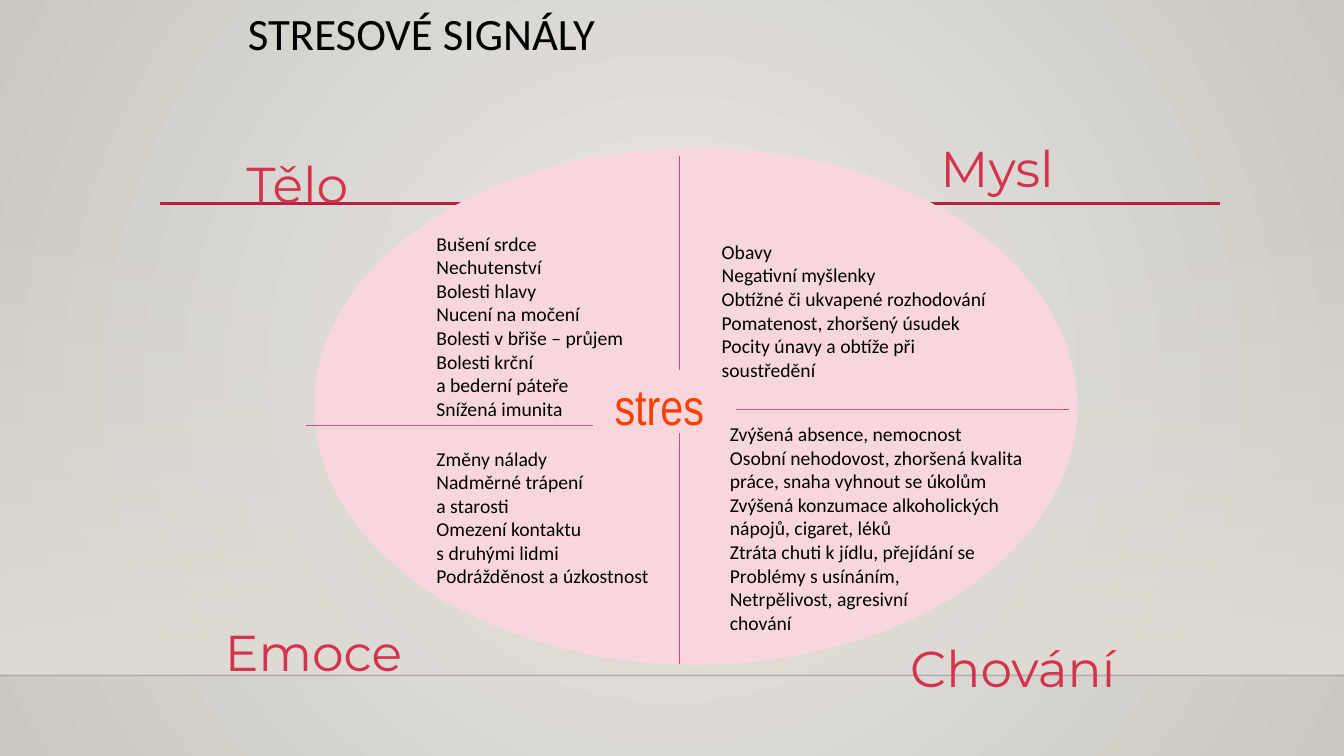
from lxml import etree
from pptx import Presentation
from pptx.dml.color import RGBColor
from pptx.enum.shapes import MSO_CONNECTOR, MSO_SHAPE
from pptx.enum.text import MSO_ANCHOR, PP_ALIGN
from pptx.oxml.ns import qn
from pptx.util import Inches, Pt

STRAIGHT = MSO_CONNECTOR.STRAIGHT
RECTANGLE, OVAL = MSO_SHAPE.RECTANGLE, MSO_SHAPE.OVAL
LEFT, CENTER = PP_ALIGN.LEFT, PP_ALIGN.CENTER
TOP = MSO_ANCHOR.TOP

BLACK = RGBColor(0x00, 0x00, 0x00)
FLOOR_LINE = RGBColor(0x00, 0x00, 0x01)
BACK_LIGHT = RGBColor(0xEC, 0xEA, 0xE7)
BACK_DARK = RGBColor(0xCA, 0xC7, 0xC1)
WALL = RGBColor(0xDF, 0xDB, 0xD5)
CRIMSON = RGBColor(0xB7, 0x1E, 0x42)
ROSE = RGBColor(0xD4, 0x32, 0x4D)
PINK = RGBColor(0xDE, 0x47, 0x8E)
PALE_PINK = RGBColor(0xF7, 0xD7, 0xDC)
ORANGE = RGBColor(0xFE, 0x3E, 0x02)

WIDTH, HEIGHT = 13.33, 7.5
FLOOR = 6.7      # height of the floor line
AXIS = 6.74      # vertical divider of the ellipse

deck = Presentation()
deck.slide_width, deck.slide_height = Inches(WIDTH), Inches(HEIGHT)
page = deck.slides.add_slide(deck.slide_layouts[6])


def add_line(x1, y1, x2, y2, color, weight):
    line = page.shapes.add_connector(
        STRAIGHT, Inches(x1), Inches(y1), Inches(x2), Inches(y2))
    line.line.color.rgb = color
    line.line.width = Pt(weight)
    etree.SubElement(line._element.spPr, qn("a:effectLst"))
    return line


def add_text(text, left, top, width, height, size, font, color, align=LEFT, wrap=False):
    box = page.shapes.add_textbox(
        Inches(left), Inches(top), Inches(width), Inches(height))
    frame = box.text_frame
    frame.text = text
    frame.word_wrap = wrap
    frame.vertical_anchor = TOP
    for para in frame.paragraphs:
        para.alignment = align
        for span in para.runs:
            span.font.size = Pt(size)
            span.font.name = font
            span.font.color.rgb = color
    return box


# Background: circular gradient
back = page.background.fill
back.gradient()
for position, (stop, color) in enumerate(zip(back.gradient_stops, (BACK_LIGHT, BACK_DARK))):
    stop.color.rgb = color
    stop.position = position
gradient = page._element.find(".//" + qn("a:gradFill"))
gradient.remove(gradient.find(qn("a:lin")))
circle = etree.SubElement(gradient, qn("a:path"), path="circle")
etree.SubElement(circle, qn("a:fillToRect"), l="50000", t="50000", r="50000", b="50000")

# Wall that fades in towards the floor
wall = page.shapes.add_shape(
    RECTANGLE, 0, Inches(2.21), Inches(WIDTH), Inches(FLOOR - 2.21))
wall.shadow.inherit = False
wall.line.fill.background()
wall.fill.gradient()
wall.fill.gradient_angle = 270
for position, stop in enumerate(wall.fill.gradient_stops):
    stop.color.rgb = WALL
    stop.position = position
clear_color = wall._element.spPr.find(".//" + qn("a:srgbClr"))
etree.SubElement(clear_color, qn("a:alpha"), val="0")

# Floor line and title rule
floor_line = add_line(0, FLOOR, WIDTH, FLOOR, FLOOR_LINE, 1)
floor_color = floor_line._element.spPr.find(".//" + qn("a:srgbClr"))
etree.SubElement(floor_color, qn("a:alpha"), val="20000")
add_line(1.59, 2.02, 12.1, 2.02, CRIMSON, 2.5)

# Title
title = add_text("STRESOVÉ SIGNÁLY", 2.36, 0.07, 7.79, 1.01, 32, "Calibri", BLACK, wrap=True)
title.text_frame.paragraphs[0].line_spacing = 0.9

# Ellipse with the word in its middle
ellipse = page.shapes.add_shape(
    OVAL, Inches(3.12), Inches(1.47), Inches(7.56), Inches(5.12))
ellipse.shadow.inherit = False
ellipse.fill.solid()
ellipse.fill.fore_color.rgb = PALE_PINK
ellipse.line.color.rgb = PALE_PINK
ellipse.line.width = Pt(0.75)
add_text("stres", 5.88, 3.67, 1.32, 0.96, 36, "Arial Narrow", ORANGE, CENTER)

# Dividers between the four quarters
for x1, y1, x2, y2 in (
    (AXIS, 1.55, AXIS, 3.67),
    (AXIS, 4.3, AXIS, 6.59),
    (7.3, 4.06, 10.6, 4.06),
    (3.04, 4.22, 5.88, 4.22),
):
    add_line(x1, y1, x2, y2, PINK, 0.75)

# Quarter headings, without side margins so that each stays on one line
for heading, left, top, width in (
    ("Mysl", 9.27, 1.31, 1.24),
    ("Chování", 8.95, 6.27, 2.19),
    ("Tělo", 2.02, 1.47, 1.86),
    ("Emoce", 2.18, 6.11, 1.86),
):
    label = add_text(heading, left, top, width, 0.7, 36, "Montserrat", ROSE, CENTER)
    label.text_frame.margin_left = label.text_frame.margin_right = 0

# Signals in each quarter
body_signals = [
    "Bušení srdce", "Nechutenství", "Bolesti hlavy", "Nucení na močení",
    "Bolesti v břiše – průjem", "Bolesti krční", "a bederní páteře",
    "Snížená imunita",
]
emotion_signals = [
    "Změny nálady", "Nadměrné trápení", "a starosti", "Omezení kontaktu",
    "s druhými lidmi", "Podrážděnost a úzkostnost",
]
behaviour_signals = [
    "Zvýšená absence, nemocnost", "Osobní nehodovost, zhoršená kvalita",
    "práce, snaha vyhnout se úkolům", "Zvýšená konzumace alkoholických",
    "nápojů, cigaret, léků", "Ztráta chuti k jídlu, přejídání se",
    "Problémy s usínáním,", "Netrpělivost, agresivní", "chování",
]
mind_signals = [
    "Obavy", "Negativní myšlenky", "Obtížné či ukvapené rozhodování",
    "Pomatenost, zhoršený úsudek", "Pocity únavy a obtíže při", "soustředění",
]
for signals, left, top, width, height in (
    (body_signals, 4.23, 2.25, 2.1, 1.99),
    (emotion_signals, 4.23, 4.38, 2.35, 1.75),
    (behaviour_signals, 7.14, 4.14, 3.19, 2.46),
    (mind_signals, 7.06, 2.33, 2.87, 1.95),
):
    add_text("\n".join(signals), left, top, width, height, 14, "Calibri", BLACK)

deck.save("out.pptx")
